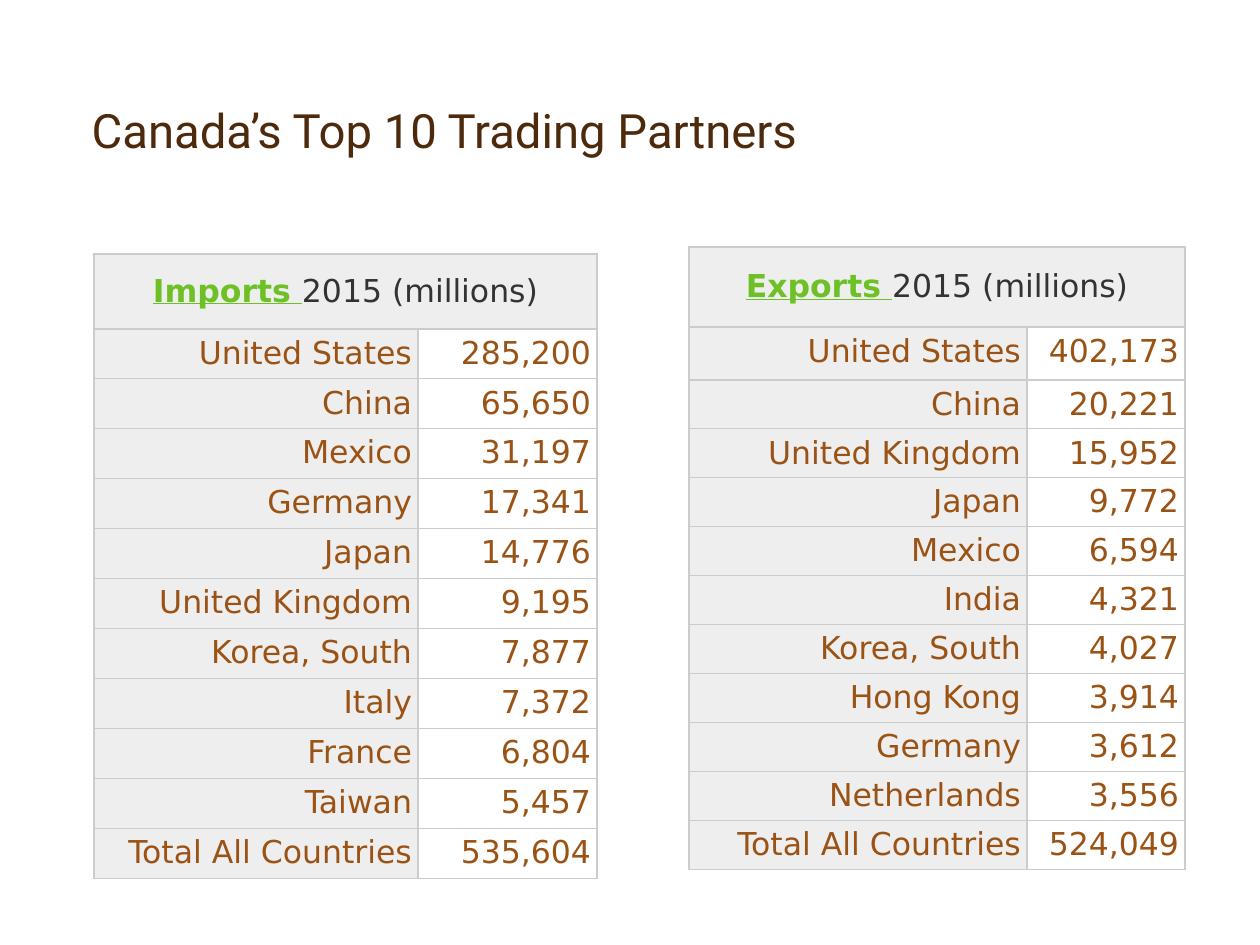
import dataclasses
import typing

import pptx
import pptx.dml.color
import pptx.enum.text
import pptx.oxml.ns
import pptx.oxml.xmlchemy
import pptx.util
from lxml import etree

PIXELS_PER_INCH = 126
ALIGN = pptx.enum.text.PP_ALIGN
ANCHOR = pptx.enum.text.MSO_ANCHOR


@dataclasses.dataclass(frozen=True)
class Theme:
    title_font: str = "Roboto"
    table_font: str = "DejaVu Sans"
    title_size: int = 27
    table_size: int = 18
    title: str = "4D2A0B"
    link: str = "6DC025"
    heading: str = "333333"
    body: str = "9A5315"
    label_fill: str = "EEEEEE"
    value_fill: str = "FFFFFF"
    border: str = "CCCCCC"
    border_width: float = 0.75


@dataclasses.dataclass(frozen=True)
class TradeTable:
    flow: str
    left: int
    top: int
    columns: tuple[int, int]
    header_height: int
    first_height: int
    row_height: int
    partners: tuple[tuple[str, int], ...]


THEME = Theme()

EXPORTS = TradeTable(
    "Exports ", 689, 247, (338, 158), 80, 53, 49,
    (
        ("United States", 402173),
        ("China", 20221),
        ("United Kingdom", 15952),
        ("Japan", 9772),
        ("Mexico", 6594),
        ("India", 4321),
        ("Korea, South", 4027),
        ("Hong Kong", 3914),
        ("Germany", 3612),
        ("Netherlands", 3556),
        ("Total All Countries", 524049),
    ),
)
IMPORTS = TradeTable(
    "Imports ", 94, 254, (324, 179), 75, 50, 50,
    (
        ("United States", 285200),
        ("China", 65650),
        ("Mexico", 31197),
        ("Germany", 17341),
        ("Japan", 14776),
        ("United Kingdom", 9195),
        ("Korea, South", 7877),
        ("Italy", 7372),
        ("France", 6804),
        ("Taiwan", 5457),
        ("Total All Countries", 535604),
    ),
)


def px(length: int) -> int:
    return round(length * pptx.util.Inches(1) / PIXELS_PER_INCH)


def apply(target: typing.Any, values: dict[str, typing.Any]) -> None:
    for name, value in values.items():
        setattr(target, name, value)


def add_span(para, text: str, color: str, font: str, size: int, **style) -> None:
    span = para.add_run()
    span.text = text
    apply(span.font, {"name": font, "size": pptx.util.Pt(size), **style})
    span.font.color.rgb = pptx.dml.color.RGBColor.from_string(color)


def add_borders(cell) -> None:
    properties = cell._tc.get_or_add_tcPr()
    width = str(pptx.util.Pt(THEME.border_width))
    for index, side in enumerate(("lnL", "lnR", "lnT", "lnB")):
        line = etree.Element(pptx.oxml.ns.qn(f"a:{side}"), w=width)
        fill = etree.SubElement(line, pptx.oxml.ns.qn("a:solidFill"))
        etree.SubElement(fill, pptx.oxml.ns.qn("a:srgbClr"), val=THEME.border)
        properties.insert(index, line)


def format_cell(cell, fill: str, anchor, across: int, down: int) -> None:
    apply(cell, {
        "vertical_anchor": anchor,
        "margin_left": px(across),
        "margin_right": px(across),
        "margin_top": px(down),
        "margin_bottom": px(down),
    })
    cell.fill.solid()
    cell.fill.fore_color.rgb = pptx.dml.color.RGBColor.from_string(fill)
    add_borders(cell)


def add_trade_table(page, trade: TradeTable) -> None:
    heights = [trade.header_height, trade.first_height]
    heights += [trade.row_height] * (len(trade.partners) - 1)
    table = page.shapes.add_table(
        len(heights), 2, px(trade.left), px(trade.top),
        px(sum(trade.columns)), px(sum(heights)),
    ).table
    apply(table, {"first_row": False, "horz_banding": False})
    for column, width in zip(table.columns, trade.columns):
        column.width = px(width)
    for row, height in zip(table.rows, heights):
        row.height = px(height)

    header = table.cell(0, 0)
    header.merge(table.cell(0, 1))
    for cell in table.rows[0].cells:
        format_cell(cell, THEME.label_fill, ANCHOR.MIDDLE, 4, 1)
    para = header.text_frame.paragraphs[0]
    para.alignment = ALIGN.CENTER
    font, size = THEME.table_font, THEME.table_size
    add_span(para, trade.flow, THEME.link, font, size, bold=True, underline=True)
    add_span(para, "2015 (millions)", THEME.heading, font, size)

    fills = (THEME.label_fill, THEME.value_fill)
    for row, (country, value) in enumerate(trade.partners, start=1):
        for column, text in enumerate((country, f"{value:,}")):
            cell = table.cell(row, column)
            format_cell(cell, fills[column], ANCHOR.TOP, 6, 6)
            para = cell.text_frame.paragraphs[0]
            para.alignment = ALIGN.RIGHT
            add_span(para, text, THEME.body, font, size)


def add_title(page, text: str) -> None:
    box = page.shapes.title
    apply(box, {"left": px(79), "top": px(42), "width": px(1103), "height": px(123)})
    apply(box.text_frame, {"vertical_anchor": ANCHOR.BOTTOM, "word_wrap": True})
    para = box.text_frame.paragraphs[0]
    apply(para, {"alignment": ALIGN.LEFT, "line_spacing": 0.9})
    add_span(para, text, THEME.title, THEME.title_font, THEME.title_size)


def main() -> None:
    deck = pptx.Presentation()
    apply(deck, {"slide_width": px(1260), "slide_height": px(945)})
    page = deck.slides.add_slide(deck.slide_layouts.get_by_name("Title Only"))
    add_title(page, "Canada’s Top 10 Trading Partners")
    for trade in (EXPORTS, IMPORTS):
        add_trade_table(page, trade)
    deck.save("out.pptx")


if __name__ == "__main__":
    main()
